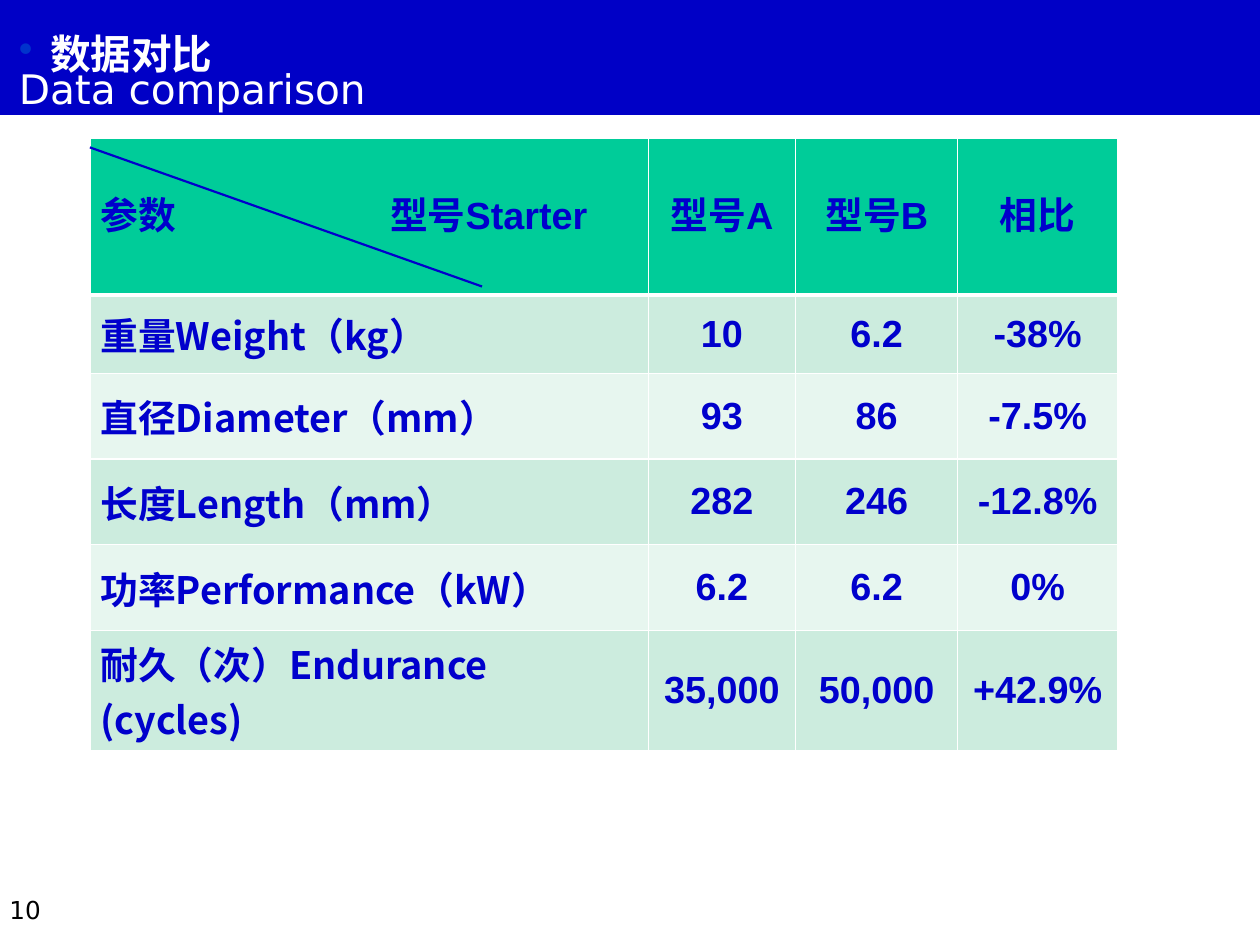
from dataclasses import dataclass
from lxml import etree
from pptx import Presentation, util as u
from pptx.dml.color import RGBColor
from pptx.enum import shapes, text
from pptx.oxml import ns


@dataclass(frozen=True)
class Theme:
    band: str = "0000C6"
    ink: str = "0000CC"
    bullet: str = "0033CC"
    header: str = "00CC99"
    stripes: tuple = ("CCECDE", "E7F6EF")
    white: str = "FFFFFF"
    black: str = "000000"
    title_font: str = "DejaVu Sans"
    table_font: str = "Arial"
    label_font: str = "Noto Sans CJK SC"
    title_size: int = 28
    table_size: int = 26
    number_size: int = 17


def add_node(parent, tag, **attributes):
    return etree.SubElement(parent, ns.qn(tag), attributes)


class ComparisonSlide:
    def __init__(self, deck, theme):
        self.theme = theme
        self.page = deck.slides.add_slide(deck.slide_layouts[5])

    def style(self, para, font, size, color, bold=False):
        for span in para.runs:
            span.font.name = font
            span.font.size = u.Pt(size)
            span.font.bold = bold
            span.font.color.rgb = RGBColor.from_string(color)
            add_node(span.font._element, "a:ea", typeface=self.theme.label_font)

    def place(self, box, left, top, width, height):
        box.left, box.top = u.Inches(left), u.Inches(top)
        box.width, box.height = u.Inches(width), u.Inches(height)

    def inset(self, frame, side, edge, anchor):
        frame.margin_left = frame.margin_right = u.Inches(side)
        frame.margin_top = frame.margin_bottom = u.Inches(edge)
        frame.vertical_anchor = anchor
        frame.word_wrap = True
        frame.auto_size = text.MSO_AUTO_SIZE.NONE

    def band(self, width, height):
        box = self.page.shapes.add_shape(
            shapes.MSO_SHAPE.RECTANGLE, 0, 0, u.Inches(width), u.Inches(height))
        box.shadow.inherit = False
        box.fill.solid()
        box.fill.fore_color.rgb = RGBColor.from_string(self.theme.band)
        box.line.fill.background()
        tree = box._element.getparent()
        tree.insert(2, box._element)

    def title(self, chinese, english):
        theme = self.theme
        box = self.page.shapes.title
        self.place(box, 0.06, 0.25, 11.89, 0.99)
        frame = box.text_frame
        self.inset(frame, 0.12, 0.06, text.MSO_ANCHOR.MIDDLE)
        frame.text = f"{chinese}\n{english}"
        for para, bold in zip(frame.paragraphs, (True, False)):
            para.alignment = text.PP_ALIGN.LEFT
            para.line_spacing = u.Pt(24)
            para.space_before = u.Pt(0)
            self.style(para, theme.title_font, theme.title_size, theme.white, bold)
        props = frame.paragraphs[0]._p.get_or_add_pPr()
        props.set("marL", str(u.Inches(0.3)))
        props.set("indent", str(-u.Inches(0.3)))
        add_node(add_node(props, "a:buClr"), "a:srgbClr", val=theme.bullet)
        add_node(props, "a:buChar", char="•")

    def page_number(self, number):
        theme = self.theme
        box = self.page.shapes.add_textbox(0, 0, 0, 0)
        self.place(box, 0.09, 8.3, 0.9, 0.6)
        self.inset(box.text_frame, 0, 0.06, text.MSO_ANCHOR.BOTTOM)
        box.text_frame.text = number
        self.style(box.text_frame.paragraphs[0], theme.title_font,
                   theme.number_size, theme.black)

    def cell(self, cell, words, font, color, align, bottom):
        theme = self.theme
        cell.text = words
        cell.vertical_anchor = text.MSO_ANCHOR.MIDDLE
        para = cell.text_frame.paragraphs[0]
        para.alignment = align
        self.style(para, font, theme.table_size, theme.ink, True)
        props = cell._tc.get_or_add_tcPr()
        for side, points in (("L", 1), ("R", 1), ("T", 1), ("B", bottom)):
            line = add_node(props, f"a:ln{side}", w=str(u.Pt(points)))
            add_node(add_node(line, "a:solidFill"), "a:srgbClr", val=theme.white)
        cell.fill.solid()
        cell.fill.fore_color.rgb = RGBColor.from_string(color)

    def table(self, left, top, widths, heights, rows):
        theme = self.theme
        grid = self.page.shapes.add_table(
            len(rows), len(widths), u.Inches(left), u.Inches(top),
            u.Inches(sum(widths)), u.Inches(sum(heights))).table
        for column, width in zip(grid.columns, widths):
            column.width = u.Inches(width)
        for index, (row, height) in enumerate(zip(rows, heights)):
            grid.rows[index].height = u.Inches(height)
            color = theme.stripes[(index - 1) % 2] if index else theme.header
            for place, words in enumerate(row):
                label = place == 0
                font = theme.label_font if label and index else theme.table_font
                align = text.PP_ALIGN.LEFT if label else text.PP_ALIGN.CENTER
                self.cell(grid.cell(index, place), words, font, color, align,
                          1 if index else 3)
        corner = grid.cell(0, 0)
        corner.margin_bottom = u.Inches(0.12)
        props = corner.text_frame.paragraphs[0]._p.get_or_add_pPr()
        add_node(add_node(props, "a:tabLst"), "a:tab",
                 pos=str(u.Inches(2.77)), algn="l")
        for place in range(1, len(widths)):
            heading = grid.cell(0, place)
            heading.vertical_anchor = text.MSO_ANCHOR.TOP
            heading.margin_top = u.Inches(0.45)

    def line(self, start, end):
        points = [u.Inches(value) for value in (*start, *end)]
        line = self.page.shapes.add_connector(shapes.MSO_CONNECTOR.STRAIGHT, *points)
        line.line.color.rgb = RGBColor.from_string(self.theme.ink)
        line.line.width = u.Pt(1.5)
        add_node(line._element.spPr, "a:effectLst")


def main():
    deck = Presentation()
    deck.slide_width, deck.slide_height = u.Inches(12.05), u.Inches(8.98)
    slide = ComparisonSlide(deck, Theme())
    slide.band(12.05, 1.1)
    slide.page_number("10")
    slide.title("数据对比", "Data comparison")
    slide.table(
        0.86, 1.32, [5.34, 1.41, 1.55, 1.53], [1.5, 0.75] + [0.82] * 3 + [1.15],
        [
            ("参数\t型号Starter", "型号A", "型号B", "相比"),
            ("重量Weight（kg）", "10", "6.2", "-38%"),
            ("直径Diameter（mm）", "93", "86", "-7.5%"),
            ("长度Length（mm）", "282", "246", "-12.8%"),
            ("功率Performance（kW）", "6.2", "6.2", "0%"),
            ("耐久（次）Endurance (cycles)", "35,000", "50,000", "+42.9%"),
        ])
    slide.line((0.86, 1.41), (4.61, 2.74))
    deck.save("out.pptx")


if __name__ == "__main__":
    main()
